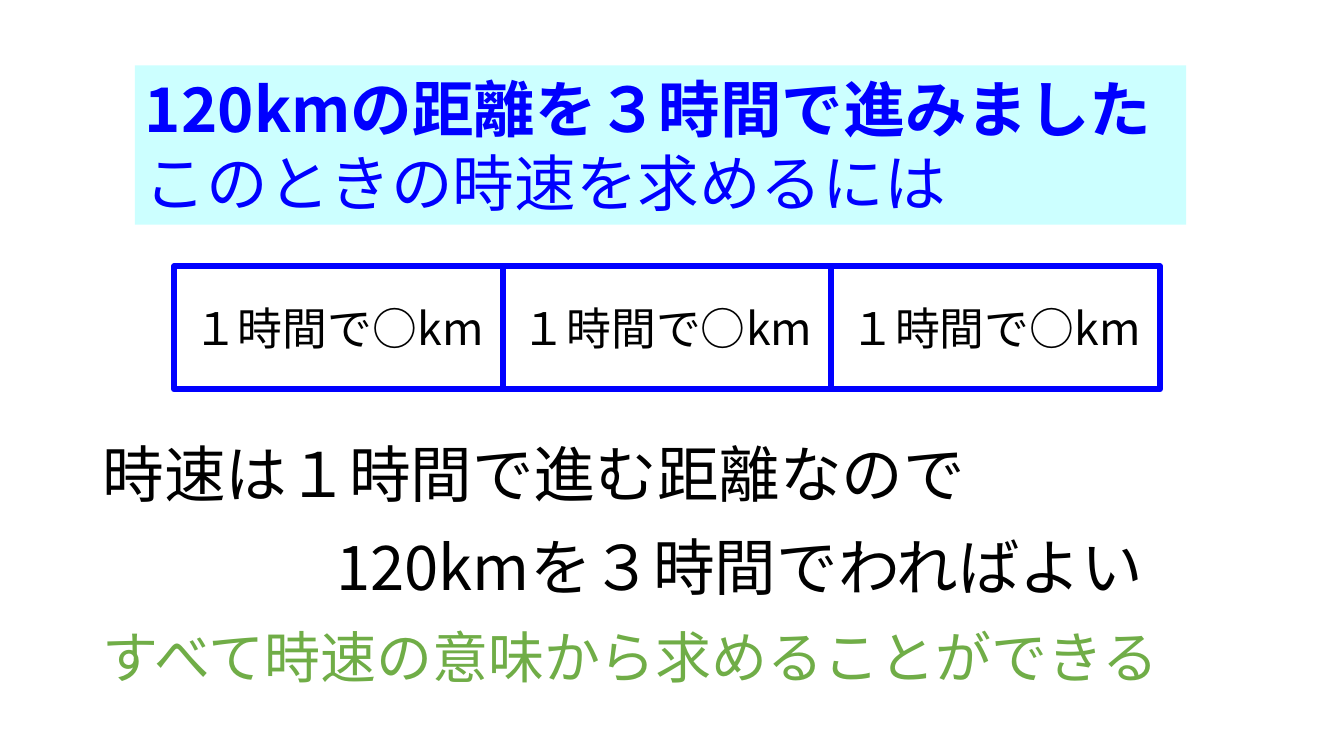
"""Build a slide that explains finding speed per hour from distance and time."""
from dataclasses import dataclass

from lxml import etree
from pptx import Presentation
from pptx.dml.color import RGBColor
from pptx.enum import shapes, text
from pptx.oxml import ns
from pptx.util import Cm, Pt


@dataclass(frozen=True)
class Theme:
    font: str = "Noto Sans CJK JP"
    black: RGBColor = RGBColor(0x00, 0x00, 0x00)
    blue: RGBColor = RGBColor(0x00, 0x00, 0xFF)
    green: RGBColor = RGBColor(0x70, 0xAD, 0x47)
    pale_cyan: RGBColor = RGBColor(0xCC, 0xFF, 0xFF)
    large: int = 44
    medium: int = 40
    small: int = 32
    border: float = 4.5
    leading: float = 1.2


THEME = Theme()


def format_para(para, size, color, align=text.PP_ALIGN.LEFT, bold=False):
    para.alignment = align
    para.line_spacing = Pt(size * THEME.leading)
    for span in para.runs:
        span.font.name = THEME.font
        span.font.size = Pt(size)
        span.font.bold = bold
        span.font.color.rgb = color
        east_asian = etree.SubElement(span.font._element, ns.qn("a:ea"))
        east_asian.set("typeface", THEME.font)


def fit_to_text(frame):
    frame.word_wrap = False
    frame.auto_size = text.MSO_AUTO_SIZE.SHAPE_TO_FIT_TEXT
    frame.vertical_anchor = text.MSO_ANCHOR.TOP


def fill_title(page, lines):
    title = page.shapes.title
    title.left, title.top = Cm(3.4), Cm(1.65)
    title.width, title.height = Cm(26.49), Cm(4.01)
    title.fill.solid()
    title.fill.fore_color.rgb = THEME.pale_cyan
    frame = title.text_frame
    frame.text = "\n".join(lines)
    fit_to_text(frame)
    for index, para in enumerate(frame.paragraphs):
        format_para(para, THEME.large, THEME.blue, bold=index == 0)


def add_hour_bar(page, label, hours):
    left, top, width, height = 4.39, 6.71, 8.28, 3.1
    for hour in range(hours):
        box = page.shapes.add_shape(
            shapes.MSO_SHAPE.RECTANGLE,
            Cm(left + hour * width), Cm(top), Cm(width), Cm(height))
        box.shadow.inherit = False
        box.fill.background()
        box.line.color.rgb = THEME.blue
        box.line.width = Pt(THEME.border)
        frame = box.text_frame
        frame.text = label
        frame.vertical_anchor = text.MSO_ANCHOR.MIDDLE
        format_para(frame.paragraphs[0], THEME.small, THEME.black,
                    text.PP_ALIGN.CENTER)


def add_statement(page, words, left, top, width, height, size, color):
    box = page.shapes.add_textbox(Cm(left), Cm(top), Cm(width), Cm(height))
    box.text_frame.text = words
    fit_to_text(box.text_frame)
    format_para(box.text_frame.paragraphs[0], size, color)


def main():
    deck = Presentation()
    deck.slide_width, deck.slide_height = Cm(33.87), Cm(19.05)
    page = deck.slides.add_slide(deck.slide_layouts.get_by_name("Title Only"))
    fill_title(page, ["120kmの距離を３時間で進みました",
                      "このときの時速を求めるには"])
    add_hour_bar(page, "１時間で○km", 3)
    add_statement(page, "時速は１時間で進む距離なので",
                  2.34, 10.85, 22.45, 2.13, THEME.large, THEME.black)
    add_statement(page, "120kmを３時間でわればよい",
                  8.23, 13.21, 21.79, 2.13, THEME.large, THEME.black)
    add_statement(page, "すべて時速の意味から求めることができる",
                  2.34, 15.57, 27.58, 1.96, THEME.medium, THEME.green)
    deck.save("out.pptx")


if __name__ == "__main__":
    main()
